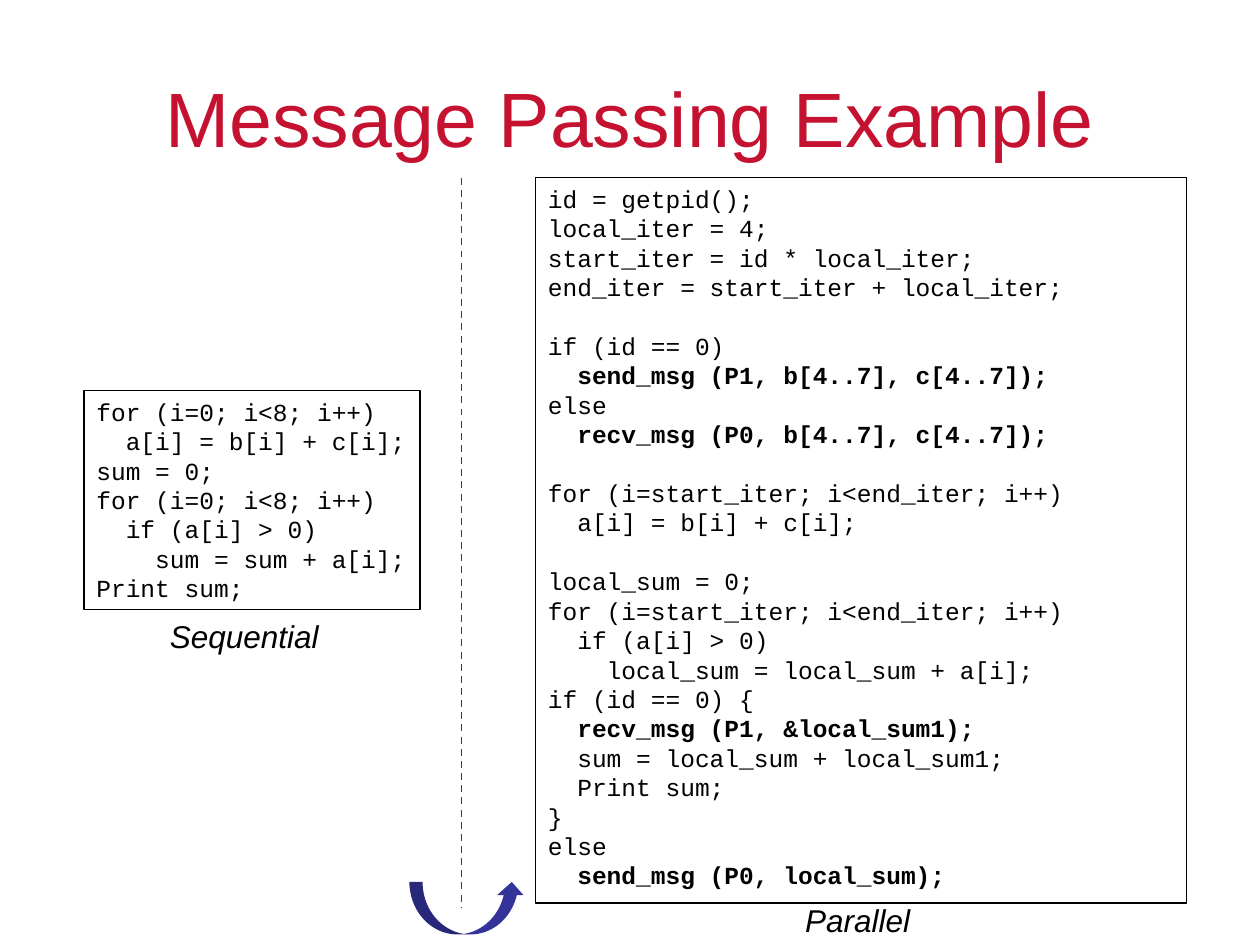
from dataclasses import dataclass

from lxml.etree import SubElement
from pptx import Presentation
from pptx.dml.color import RGBColor
from pptx.enum.dml import MSO_LINE_DASH_STYLE as Dash
from pptx.enum.shapes import MSO_CONNECTOR as Connector, MSO_SHAPE as Shape
from pptx.enum.text import MSO_ANCHOR as Anchor, PP_ALIGN as Align
from pptx.oxml.ns import qn
from pptx.slide import Slide
from pptx.util import Pt

COLORS = {"title": "C41230", "text": "000000", "accent": "333399"}
CODE_SIZE = 14
CODE_PITCH = 16.8

SEQUENTIAL = """for (i=0; i<8; i++)
  a[i] = b[i] + c[i];
sum = 0;
for (i=0; i<8; i++)
  if (a[i] > 0)
    sum = sum + a[i];
Print sum;"""

PARALLEL = """id = getpid();
local_iter = 4;
start_iter = id * local_iter;
end_iter = start_iter + local_iter;

if (id == 0)
  send_msg (P1, b[4..7], c[4..7]);
else
  recv_msg (P0, b[4..7], c[4..7]);

for (i=start_iter; i<end_iter; i++)
  a[i] = b[i] + c[i];

local_sum = 0;
for (i=start_iter; i<end_iter; i++)
  if (a[i] > 0)
    local_sum = local_sum + a[i];
if (id == 0) {
  recv_msg (P1, &local_sum1);
  sum = local_sum + local_sum1;
  Print sum;
}
else
  send_msg (P0, local_sum);"""


@dataclass(frozen=True)
class Box:
    """A rectangle on the slide, in points."""

    left: float
    top: float
    width: float
    height: float

    def lengths(self) -> list[Pt]:
        """Return the four lengths for an add method."""
        return [Pt(v) for v in (self.left, self.top, self.width, self.height)]


@dataclass(frozen=True)
class Label:
    """One line of Arial text."""

    text: str
    box: Box
    size: float
    color: str = "text"
    italic: bool = False
    wrap: bool = False
    align: Align = Align.LEFT
    anchor: Anchor = Anchor.TOP


@dataclass(frozen=True)
class Listing:
    """A framed block of code."""

    code: str
    box: Box


LABELS = [
    Label("Message Passing Example", Box(36, 21.6, 648, 90), 44, "title",
          wrap=True, align=Align.CENTER, anchor=Anchor.MIDDLE),
    Label("Sequential", Box(90, 349.2, 100, 28.8), 18, italic=True),
    Label("Parallel", Box(453, 511.2, 75, 28.8), 18, italic=True),
]
LISTINGS = [
    Listing(SEQUENTIAL, Box(48, 223.2, 192, 125)),
    Listing(PARALLEL, Box(306, 101.5, 372, 414.5)),
]


def rgb(name: str) -> RGBColor:
    """Return a colour of the palette."""
    return RGBColor.from_string(COLORS[name])


def add_label(s: Slide, label: Label) -> None:
    """Draw one line of text."""
    tf = s.shapes.add_textbox(*label.box.lengths()).text_frame
    tf.word_wrap = label.wrap
    tf.vertical_anchor = label.anchor
    tf.text = label.text
    p = tf.paragraphs[0]
    p.alignment = label.align
    font = p.runs[0].font
    font.name, font.size, font.italic = "Arial", Pt(label.size), label.italic
    font.color.rgb = rgb(label.color)


def add_listing(s: Slide, listing: Listing) -> None:
    """Draw a code frame, with calls that pass messages in bold."""
    sp = s.shapes.add_shape(Shape.RECTANGLE, *listing.box.lengths())
    sp.shadow.inherit = False
    sp.fill.background()
    sp.line.color.rgb = rgb("text")
    sp.line.width = Pt(0.75)
    tf = sp.text_frame
    tf.word_wrap = True
    tf.vertical_anchor = Anchor.TOP
    blocks = listing.code.split("\n\n")
    tf.text = "\n".join(blocks)
    starts = {sum(len(b.splitlines()) for b in blocks[:i]) for i in range(1, len(blocks))}
    for i, p in enumerate(tf.paragraphs):
        p.alignment = Align.LEFT
        p.line_spacing = Pt(CODE_PITCH)
        p.space_before = Pt(CODE_PITCH if i in starts else 0)
        font = p.runs[0].font
        font.name, font.size = "Courier New", Pt(CODE_SIZE)
        font.bold = "_msg" in p.text
        font.color.rgb = rgb("text")


def add_divider(s: Slide, x: float, top: float, bottom: float) -> None:
    """Draw the dashed line between the two versions."""
    line = s.shapes.add_connector(Connector.STRAIGHT, Pt(x), Pt(top), Pt(x), Pt(bottom))
    line.line.color.rgb = rgb("accent")
    line.line.width = Pt(1)
    line.line.dash_style = Dash.DASH
    SubElement(line._element.spPr, qn("a:effectLst"))


def add_arrow(s: Slide, box: Box) -> None:
    """Draw the curved arrow from sequential to parallel."""
    sp = s.shapes.add_shape(Shape.CURVED_UP_ARROW, *box.lengths())
    sp.shadow.inherit = False
    sp.fill.solid()
    sp.fill.fore_color.rgb = rgb("accent")
    sp.line.fill.background()


def main() -> None:
    """Build the slide and save it."""
    prs = Presentation()
    prs.slide_width, prs.slide_height = Pt(720), Pt(540)
    s = prs.slides.add_slide(prs.slide_layouts[6])
    for label in LABELS:
        add_label(s, label)
    add_divider(s, 263.7, 101.5, 519)
    add_arrow(s, Box(234, 504, 66, 30))
    for listing in LISTINGS:
        add_listing(s, listing)
    prs.save("out.pptx")


if __name__ == "__main__":
    main()
